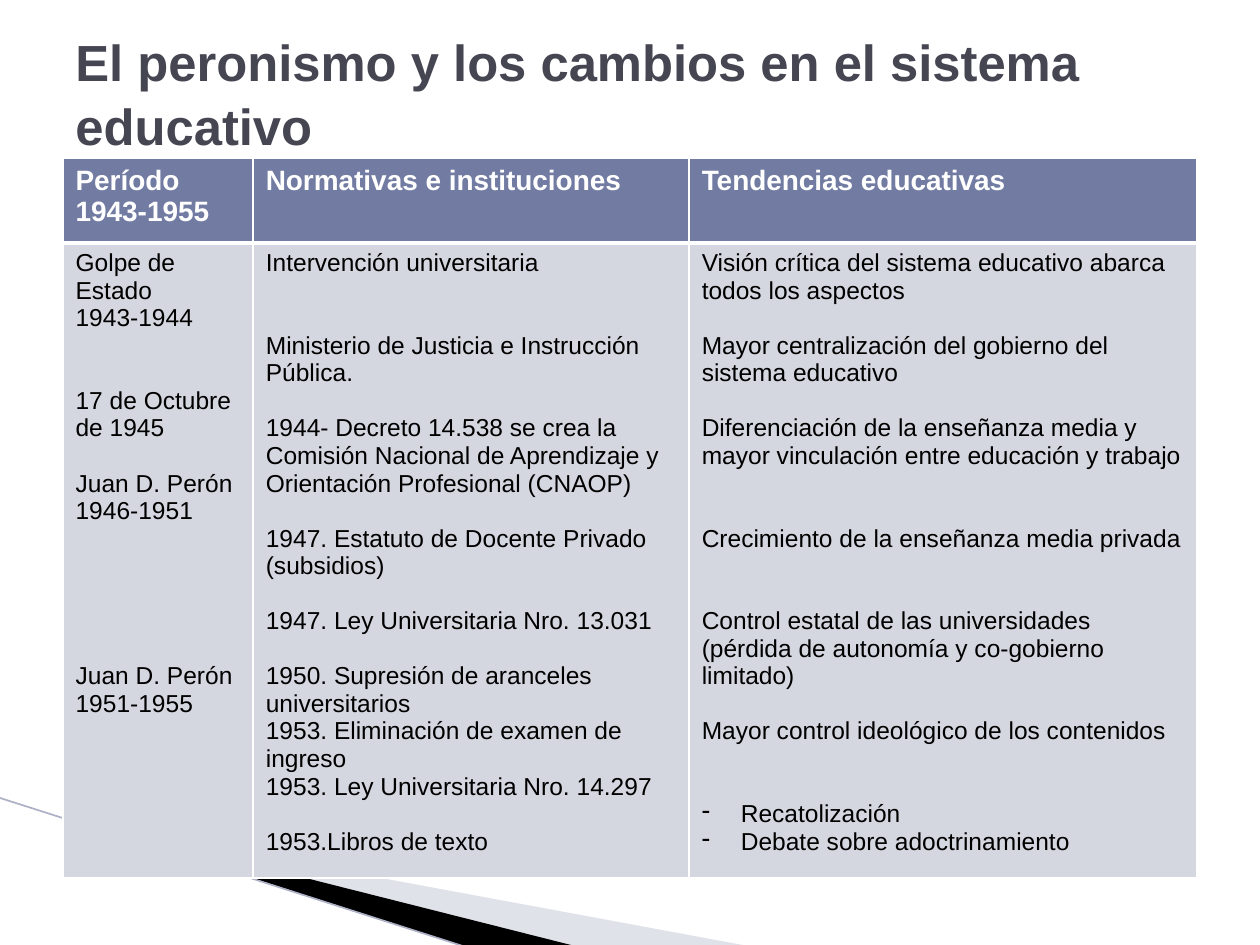
from dataclasses import dataclass

from lxml.etree import SubElement as Sub
from pptx import Presentation
from pptx.dml.color import RGBColor as Rgb
from pptx.enum.shapes import MSO_CONNECTOR as Link
from pptx.enum.text import MSO_ANCHOR as Anchor
from pptx.oxml.ns import qn
from pptx.util import Inches, Pt


@dataclass(frozen=True)
class Theme:
    font: str = "Arial"
    title: str = "464653"
    head: str = "727CA3"
    body: str = "D5D7E0"
    white: str = "FFFFFF"
    black: str = "000000"
    pale: str = "B3B7CB"
    line: str = "ACB1C6"
    big: int = 29
    mid: int = 16
    small: int = 14
    gap: float = 15.75  # height of one body line


T = Theme()

WIDTHS = (1.51, 3.46, 4.03)
HEIGHTS = (0.67, 5.04)
HEADS = (
    ["Período", "1943-1955"],
    ["Normativas e instituciones"],
    ["Tendencias educativas"],
)
# Each entry: lines left free above, text
PERIODS = [
    (0, "Golpe de Estado"),
    (0, "1943-1944"),
    (2, "17 de Octubre de 1945"),
    (1, "Juan D. Perón"),
    (0, "1946-1951"),
    (5, "Juan D. Perón"),
    (0, "1951-1955"),
]
RULES = [
    (0, "Intervención universitaria"),
    (2, "Ministerio de Justicia e Instrucción Pública."),
    (1, "1944- Decreto 14.538 se crea la Comisión Nacional de Aprendizaje y "
        "Orientación Profesional (CNAOP)"),
    (1, "1947. Estatuto de Docente Privado (subsidios)"),
    (1, "1947. Ley Universitaria Nro. 13.031"),
    (1, "1950. Supresión de aranceles universitarios"),
    (0, "1953. Eliminación de examen de ingreso"),
    (0, "1953. Ley Universitaria Nro. 14.297"),
    (1, "1953.Libros de texto"),
]
TRENDS = [
    (0, "Visión crítica del sistema educativo abarca todos los aspectos"),
    (1, "Mayor centralización del gobierno del sistema educativo"),
    (1, "Diferenciación de la enseñanza media y mayor vinculación entre "
        "educación y trabajo"),
    (2, "Crecimiento de la enseñanza media privada"),
    (2, "Control estatal de las universidades (pérdida de autonomía y "
        "co-gobierno limitado)"),
    (1, "Mayor control ideológico de los contenidos"),
]
POINTS = [(2, "Recatolización"), (0, "Debate sobre adoctrinamiento")]


def style(para, size, color, bold=False):
    font = para.font
    font.name, font.size, font.bold = T.font, Pt(size), bold
    font.color.rgb = Rgb.from_string(color)


def dash(para):
    """Hang the paragraph from a dash."""
    props = para._p.get_or_add_pPr()
    props.set("marL", str(Inches(0.31)))
    props.set("indent", str(-Inches(0.31)))
    Sub(props, qn("a:buChar"), char="-")


def fill_cell(cell, items, size, ink, back, bold=False, base=1, points=()):
    """Write one cell; base is the width of its bottom border."""
    props = cell._tc.get_or_add_tcPr()
    for side, width in zip("LRTB", (1, 1, 1, base)):
        edge = Sub(props, qn(f"a:ln{side}"), w=str(Pt(width)))
        Sub(Sub(edge, qn("a:solidFill")), qn("a:srgbClr"), val=T.white)
    cell.fill.solid()
    cell.fill.fore_color.rgb = Rgb.from_string(back)

    frame = cell.text_frame
    for i, (skip, text) in enumerate([*items, *points]):
        para = frame.add_paragraph() if i else frame.paragraphs[0]
        para.text = text
        if i >= len(items):
            dash(para)
        if skip:
            para.space_before = Pt(skip * T.gap)
        style(para, size, ink, bold)


def add_grid(slide, left, top, width):
    """Table of periods, rules and trends."""
    grid = slide.shapes.add_table(
        len(HEIGHTS), len(WIDTHS), Inches(left), Inches(top),
        Inches(width), Inches(sum(HEIGHTS))).table
    grid.horz_banding = False
    for col, size in zip(grid.columns, WIDTHS):
        col.width = Inches(size * width / sum(WIDTHS))
    for row, size in zip(grid.rows, HEIGHTS):
        row.height = Inches(size)
    for i, head in enumerate(HEADS):
        fill_cell(grid.cell(0, i), [(0, text) for text in head],
                  T.mid, T.white, T.head, bold=True, base=3)
    for i, items in enumerate((PERIODS, RULES, TRENDS)):
        fill_cell(grid.cell(1, i), items, T.small, T.black, T.body,
                  points=POINTS if items is TRENDS else ())


def add_title(slide, left, top, width, height):
    box = slide.shapes.add_textbox(
        Inches(left), Inches(top), Inches(width), Inches(height))
    frame = box.text_frame
    frame.word_wrap = True
    frame.vertical_anchor = Anchor.MIDDLE
    para = frame.paragraphs[0]
    para.text = "El peronismo y los cambios en el sistema educativo"
    para.line_spacing = 1.05
    style(para, T.big, T.title, bold=True)


def add_wedge(slide, left, top, dots, color, alpha=None):
    """Closed outline through dots, measured from left and top."""
    spots = [(Inches(left + x), Inches(top + y)) for x, y in dots]
    pen = slide.shapes.build_freeform(*spots[0])
    pen.add_line_segments(spots[1:], close=True)
    wedge = pen.convert_to_shape()
    wedge.shadow.inherit = False
    wedge.line.fill.background()
    wedge.fill.solid()
    wedge.fill.fore_color.rgb = Rgb.from_string(color)
    if alpha:
        tone = wedge._element.spPr.find(f".//{qn('a:srgbClr')}")
        Sub(tone, qn("a:alpha"), val=str(alpha * 1000))


def add_sweep(slide, left, top):
    """Slanted wedges and line along the bottom edge."""
    add_wedge(slide, left, top,
              [(0.02, 0.02), (5.42, 1.02), (4.03, 1.02), (0.02, 0.01)],
              T.pale, alpha=40)
    add_wedge(slide, left, top,
              [(0, 0), (4.04, 1.02), (3.19, 1.03), (0.01, 0.01)], T.black)
    line = slide.shapes.add_connector(
        Link.STRAIGHT, Inches(left - 0.54), Inches(top - 0.16),
        Inches(left + 3.18), Inches(top + 1.03))
    line.line.color.rgb = Rgb.from_string(T.line)
    line.line.width = Pt(0.95)
    Sub(line._element.spPr, qn("a:effectLst"))


def main():
    deck = Presentation()
    deck.slide_width, deck.slide_height = Inches(10), Inches(7.5)
    slide = deck.slides.add_slide(deck.slide_layouts[6])
    add_sweep(slide, 0.53, 6.49)
    add_grid(slide, 0.5, 1.26, 9)
    add_title(slide, 0.5, 0.3, 9, 0.85)
    deck.save("out.pptx")


if __name__ == "__main__":
    main()
